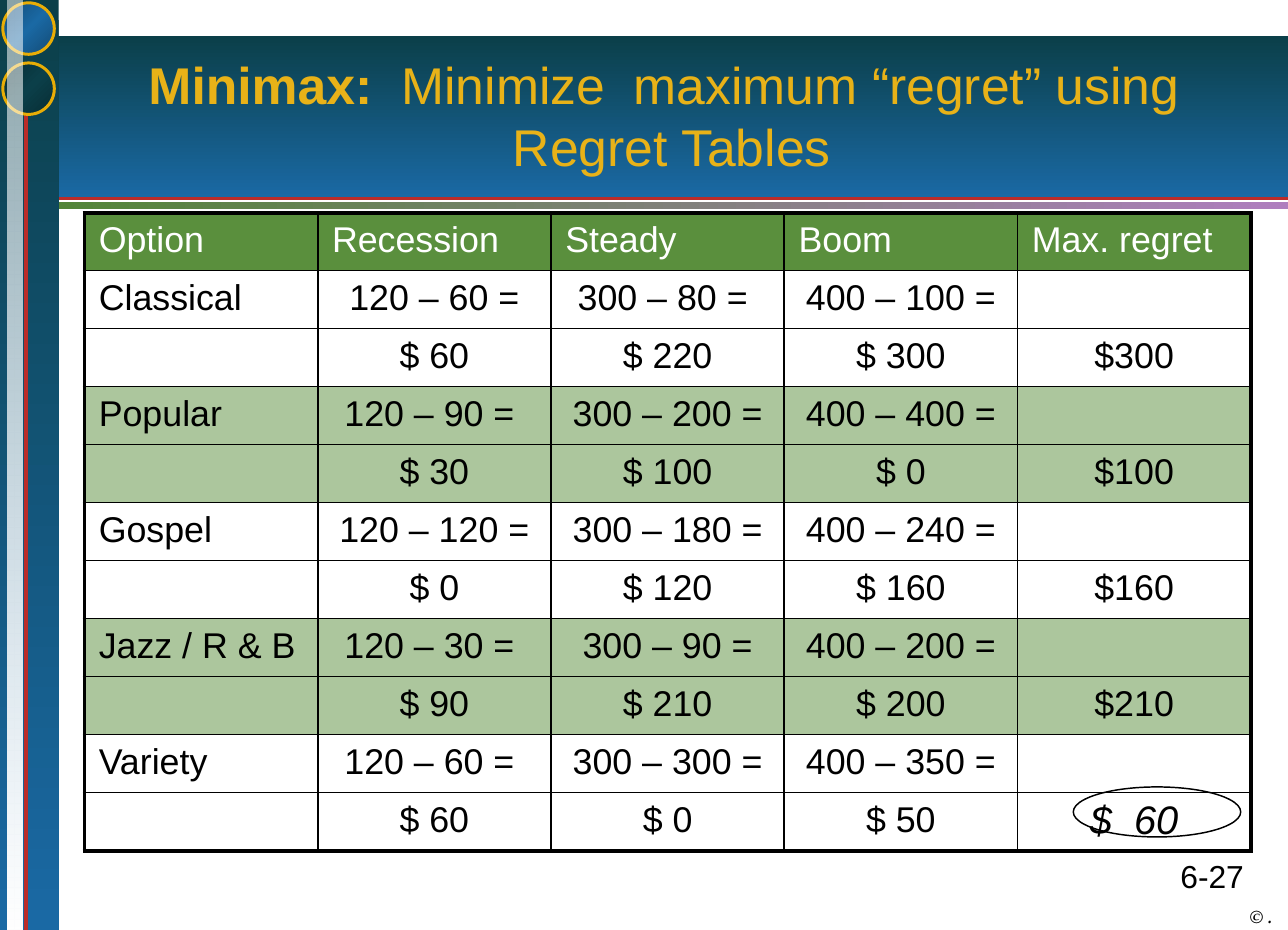
from lxml import etree
from pptx import Presentation
from pptx import util as u
from pptx.dml.color import RGBColor
from pptx.enum import shapes, text
from pptx.oxml import parse_xml
from pptx.oxml.ns import nsdecls, qn

W, H = 9, 6.5
SIDE = 0.41  # width of the left strip
C = dict(teal="0B3F49", blue="1A69A4", dark_teal="082D34", dark_blue="134B75",
         gold="E8AD06", title="E8B218", red="BB2C29", green="5A8F3D",
         leaf="538438", violet="AF7EBE", white="FFFFFF", black="000000")
ROWS = [
    ["Option", "Recession", "Steady", "Boom", "Max. regret"],
    ["Classical", "120 – 60 =", "300 – 80 = ", "400 – 100 =", ""],
    ["", "$ 60", "$ 220", "$ 300", "$300"],
    ["Popular", "120 – 90 = ", "300 – 200 =", "400 – 400 =", ""],
    ["", "$ 30", "$ 100", "$ 0", "$100"],
    ["Gospel", "120 – 120 =", "300 – 180 =", "400 – 240 =", ""],
    ["", "$ 0", "$ 120", "$ 160", "$160"],
    ["Jazz / R & B", "120 – 30 = ", "300 – 90 =", "400 – 200 =", ""],
    ["", "$ 90", "$ 210", "$ 200", "$210"],
    ["Variety", "120 – 60 = ", "300 – 300 =", "400 – 350 =", ""],
    ["", "$ 60", "$ 0", "$ 50", "$  60"],
]


def rgb(name):
    return RGBColor.from_string(C[name])


def inches(*box):
    return [u.Inches(v) for v in box]


def add_text(p, words, size=18, color="black", font="Arial", bold=False,
             italic=False, align="LEFT", shadow=False):
    p.alignment = getattr(text.PP_ALIGN, align)
    r = p.add_run()
    r.text = words
    f = r.font
    f.size, f.name, f.bold, f.italic = u.Pt(size), font, bold, italic
    f.color.rgb = rgb(color)
    if shadow:
        fill = r._r.rPr.find(qn("a:solidFill"))
        fill.addnext(parse_xml(
            f'<a:effectLst {nsdecls("a")}><a:outerShdw dist="38100" dir="2700000">'
            f'<a:srgbClr val="{C["black"]}"/></a:outerShdw></a:effectLst>'))


def gradient(sp, colors, angle, first_alpha=100):
    """Spread the colours evenly along a clockwise angle."""
    stops = ""
    for i, name in enumerate(colors):
        alpha = first_alpha if i == 0 else 100
        stops += (f'<a:gs pos="{100000 * i // (len(colors) - 1)}"><a:srgbClr val="{C[name]}">'
                  f'<a:alpha val="{alpha * 1000}"/></a:srgbClr></a:gs>')
    sp._element.spPr.find(qn("a:prstGeom")).addnext(parse_xml(
        f'<a:gradFill {nsdecls("a")} rotWithShape="1"><a:gsLst>{stops}</a:gsLst>'
        f'<a:lin ang="{angle * 60000}" scaled="0"/></a:gradFill>'))


def add_shape(s, kind, box, colors=None, angle=90, line=None, width=1, first_alpha=100):
    sp = s.shapes.add_shape(getattr(shapes.MSO_SHAPE, kind), *inches(*box))
    sp.shadow.inherit = False
    if colors:
        gradient(sp, colors, angle, first_alpha)
    else:
        sp.fill.background()
    if line:
        sp.line.color.rgb, sp.line.width = rgb(line), u.Pt(width)
    else:
        sp.line.fill.background()


def add_line(s, x1, y1, x2, y2, width):
    ln = s.shapes.add_connector(shapes.MSO_CONNECTOR.STRAIGHT, *inches(x1, y1, x2, y2))
    ln.line.color.rgb, ln.line.width = rgb("red"), u.Pt(width)
    etree.SubElement(ln._element.spPr, qn("a:effectLst"))


def header(s, x, y, w, h):
    """Banner with its rules and title."""
    add_shape(s, "RECTANGLE", (0, y, x + w, h), ["teal", "blue"])
    add_line(s, x, y + h + 0.01, x + w, y + h + 0.01, 1.5)
    add_shape(s, "RECTANGLE", (x, y + h + 0.03, w, 0.05), ["leaf", "violet"], angle=0)
    t = s.shapes.title
    t.left, t.top, t.width, t.height = inches(x, y + 0.01, w, h - 0.05)
    tf = t.text_frame
    tf.word_wrap, tf.vertical_anchor = True, text.MSO_ANCHOR.MIDDLE
    tf.margin_left = tf.margin_right = u.Inches(0.09)
    tf.margin_top = tf.margin_bottom = u.Inches(0.04)
    p = tf.paragraphs[0]
    look = dict(size=26, color="title", align="CENTER", shadow=True)
    add_text(p, "Minimax:", bold=True, **look)
    add_text(p, "  Minimize  maximum “regret” using ", **look)
    p.add_line_break()
    add_text(p, "Regret Tables", **look)
    s.shapes._spTree.append(t._element)  # bring the title in front of the banner


def side_strip(s, w, h):
    """Left strip with a red rule, two rings and a light band."""
    add_shape(s, "RECTANGLE", (0, 0, w, h), ["teal", "blue"])
    add_line(s, 0.18, 0.79, 0.18, h, 2.25)
    for y, edge, mid in [(0.44, "dark_teal", "teal"), (0.02, "dark_blue", "blue")]:
        add_shape(s, "OVAL", (0.02, y, 0.36, 0.36), [edge, mid, edge], angle=45,
                  line="gold", width=1.5)
    add_shape(s, "RECTANGLE", (0.05, 0, 0.11, h), ["white", "white"], first_alpha=52)


def borders(cell, widths):
    tc = cell._tc.get_or_add_tcPr()
    for i, (side, width) in enumerate(zip("LRTB", widths)):
        tc.insert(i, parse_xml(
            f'<a:ln{side} {nsdecls("a")} w="{u.Pt(width)}"><a:solidFill>'
            f'<a:srgbClr val="{C["black"]}"/></a:solidFill></a:ln{side}>'))


def regret_table(s, x, y, w, h):
    rows, cols = len(ROWS), len(ROWS[0])
    tbl = s.shapes.add_table(rows, cols, *inches(x, y, w, h)).table
    for col in tbl.columns:
        col.width = u.Inches(w / cols)
    for i, row in enumerate(ROWS):
        tbl.rows[i].height = u.Inches(h / rows)
        for j, words in enumerate(row):
            cell = tbl.cell(i, j)
            best = (i, j) == (rows - 1, cols - 1)
            shaded = i > 0 and (i - 1) // 2 % 2 == 1
            if i == 0 or shaded:
                cell.fill.solid()
                cell.fill.fore_color.rgb = rgb("green")
            else:
                cell.fill.background()
            if shaded:
                clr = cell._tc.tcPr.find(".//" + qn("a:srgbClr"))
                etree.SubElement(clr, qn("a:alpha"), val="50000")
            outer = (j == 0, j == cols - 1, i == 0, i == rows - 1)
            borders(cell, [2.25 if edge else 1 for edge in outer])
            if best:
                cell.margin_top = cell.margin_bottom = u.Inches(0.04)
            if words:
                add_text(cell.text_frame.paragraphs[0], words, size=20 if best else 18,
                         italic=best, color="white" if i == 0 else "black",
                         align="CENTER" if i and j else "LEFT")
    # Ring around the smallest maximum regret
    add_shape(s, "OVAL", (x + w - 1.24, y + h - 0.39, 1.17, 0.35), line="black", width=0.75)


def footer(s, right):
    for box, words, margin, look in [
            ((right - 0.89, 5.94, 0.79, 0.37), "6-27", 0.1, dict(size=16)),
            ((right - 0.16, 6.33, 0.16, 0.15), "© .", 0,
             dict(size=9, font="TeX Gyre Pagella", bold=True, italic=True))]:
        tf = s.shapes.add_textbox(*inches(*box)).text_frame
        tf.word_wrap = margin > 0
        tf.margin_left = tf.margin_right = u.Inches(margin)
        tf.margin_top = tf.margin_bottom = u.Inches(margin / 2)
        add_text(tf.paragraphs[0], words, align="RIGHT", **look)


def main():
    prs = Presentation()
    prs.slide_width, prs.slide_height = inches(W, H)
    s = prs.slides.add_slide(prs.slide_layouts[5])
    header(s, 0.39, 0.25, W - 0.39, 1.13)
    side_strip(s, SIDE, H)
    regret_table(s, 0.59, 1.49, 8.15, 4.4)
    footer(s, 8.89)
    prs.save("out.pptx")


if __name__ == "__main__":
    main()
